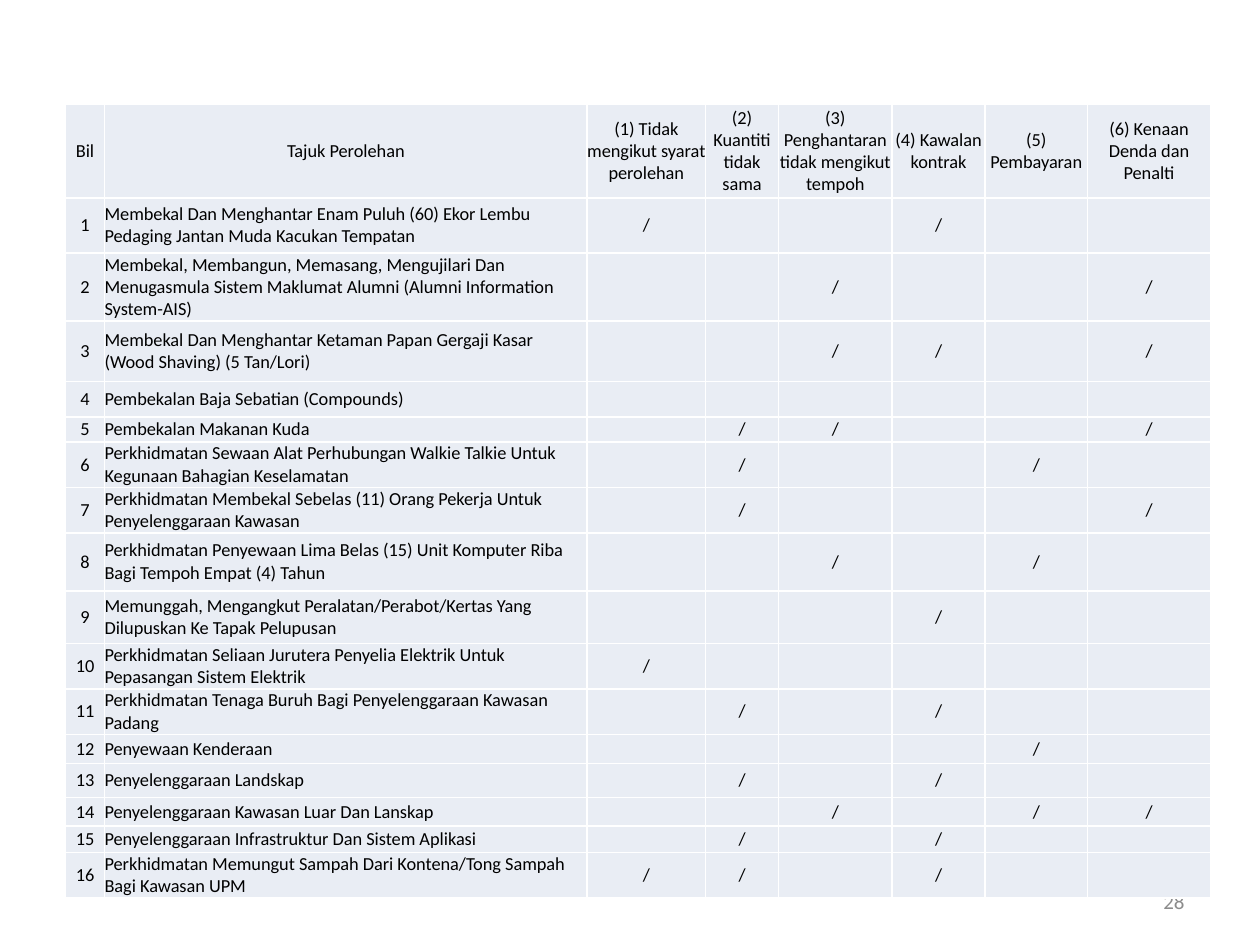
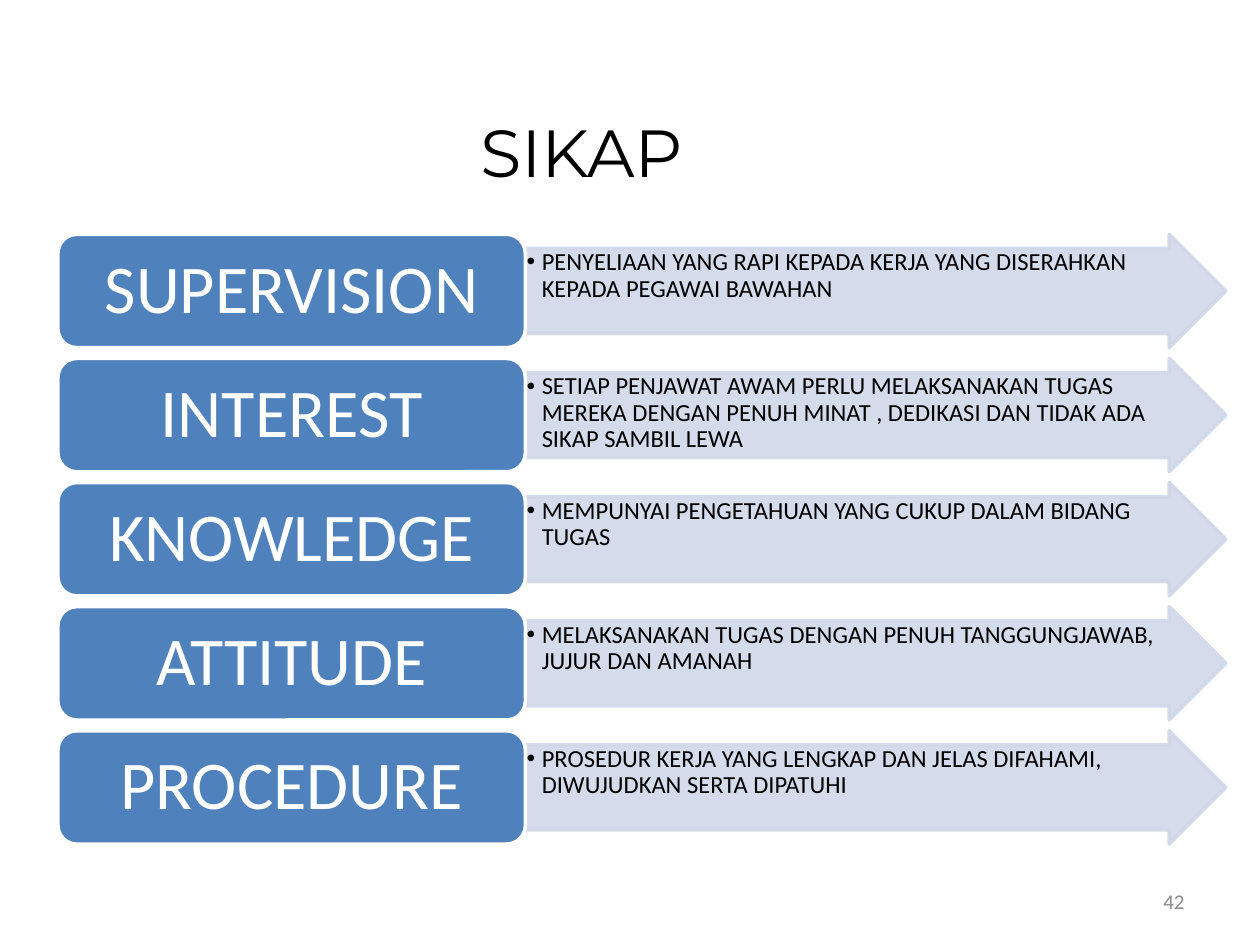
from lxml.etree import SubElement
from pptx import Presentation
from pptx.dml.color import RGBColor
from pptx.enum.shapes import MSO_SHAPE as Shape
from pptx.enum.text import MSO_ANCHOR as Anchor, MSO_AUTO_SIZE as AutoSize, PP_ALIGN as Align
from pptx.oxml.ns import qn
from pptx.util import Inches, Pt

# Shared style: the slide is a grid of 100 columns by 75 rows
WIDTH, HEIGHT = Inches(10), Inches(7.5)
COL, ROW = WIDTH / 100, HEIGHT / 75
BLACK, WHITE, GREY = "000000", "FFFFFF", "8C8C8C"
BLUE, PALE_BLUE, CELL_BLUE = "4F81BD", "D0D8E8", "E9EDF4"
TITLE = dict(name="Montserrat", size=38, color=BLACK)
NUMBER = dict(name="Calibri", size=12, color=GREY)
CELL = dict(name="Calibri", size=10.5, color=BLACK)
LABEL = dict(name="Calibri", size=39, color=WHITE)
DETAIL = dict(name="Calibri", size=14, color=BLACK)


def rgb(value):
    return RGBColor.from_string(value)


def set_format(font, style):
    for key, value in style.items():
        if key == "color":
            font.color.rgb = rgb(value)
        else:
            setattr(font, key, Pt(value) if key == "size" else value)


def set_margins(target, left, top, right, bottom):
    for side, value in dict(left=left, top=top, right=right, bottom=bottom).items():
        setattr(target, f"margin_{side}", Inches(value))


def set_alpha(parent, percent):
    for color in parent.iter(qn("a:srgbClr")):
        SubElement(color, qn("a:alpha"), val=str(percent * 1000))


def add_bullet(p, indent):
    pPr = p._p.get_or_add_pPr()
    pPr.set("marL", str(Inches(indent)))
    pPr.set("indent", str(-Inches(indent)))
    SubElement(pPr, qn("a:buFont"), typeface="Arial")
    SubElement(pPr, qn("a:buChar"), char="•")


class Deck:
    """Holds the presentation and the slide being built."""

    def __init__(self):
        self.prs = Presentation()
        self.prs.slide_width, self.prs.slide_height = WIDTH, HEIGHT
        self.s = None

    def box(self, col, row, cols, rows):
        return [round(v) for v in (col * COL, row * ROW, cols * COL, rows * ROW)]

    def text(self, tf, text, style, align, anchor=Anchor.MIDDLE):
        tf.word_wrap = True
        tf.auto_size = AutoSize.NONE
        tf.vertical_anchor = anchor
        p = tf.paragraphs[0]
        p.text, p.alignment = text, align
        for r in p.runs:
            set_format(r.font, style)
        return p

    def new_slide(self, number, title=None):
        self.s = self.prs.slides.add_slide(self.prs.slide_layouts[5 if title else 6])
        if title:
            sp = self.s.shapes.title
            sp.left, sp.top, sp.width, sp.height = self.box(4.6, 8.3, 83.1, 9.5)
            self.text(sp.text_frame, title, TITLE, Align.CENTER, Anchor.TOP)
        sp = self.s.shapes.add_textbox(*self.box(71.7, 69.5, 23.3, 4))
        self.text(sp.text_frame, number, NUMBER, Align.RIGHT)

    def shape(self, kind, box, fill, line, opacity=None):
        sp = self.s.shapes.add_shape(kind, *self.box(*box))
        sp.shadow.inherit = False
        sp.fill.solid()
        sp.fill.fore_color.rgb = rgb(fill)
        sp.line.color.rgb = rgb(line)
        sp.line.width = Pt(2)
        if opacity:
            set_alpha(sp._element.spPr, opacity)
        return sp

    def arrow(self, box, text):
        sp = self.shape(Shape.RIGHT_ARROW, box, PALE_BLUE, PALE_BLUE, 90)
        sp.adjustments[0], sp.adjustments[1] = 0.75, 0.5
        p = self.text(sp.text_frame, text, DETAIL, Align.LEFT, Anchor.TOP)
        set_margins(sp.text_frame, 0.01, 0.01, 0.23, 0.01)
        add_bullet(p, 0.12)
        p.line_spacing = 0.9

    def label(self, box, text):
        sp = self.shape(Shape.ROUNDED_RECTANGLE, box, BLUE, WHITE)
        p = self.text(sp.text_frame, text, LABEL, Align.CENTER)
        set_margins(sp.text_frame, 0.16, 0.08, 0.16, 0.08)
        p.line_spacing = 0.9

    def cell(self, cell, text, align):
        tcPr = cell._tc.get_or_add_tcPr()
        for side in ("lnL", "lnR", "lnT", "lnB"):
            ln = SubElement(tcPr, qn(f"a:{side}"), w=str(Pt(1)))
            SubElement(SubElement(ln, qn("a:solidFill")), qn("a:srgbClr"), val=WHITE)
        cell.fill.solid()
        cell.fill.fore_color.rgb = rgb(CELL_BLUE)
        cell.vertical_anchor = Anchor.MIDDLE
        set_margins(cell, 0, 0, 0, 0)
        p = cell.text_frame.paragraphs[0]
        p.text, p.alignment = text, align
        for r in p.runs:
            set_format(r.font, CELL)
        if not text:
            SubElement(p._p, qn("a:endParaRPr"), sz=str(int(CELL["size"] * 100)))

    def table(self, col, row, widths, heights, records, left_column):
        box = self.box(col, row, sum(widths), sum(heights))
        table = self.s.shapes.add_table(len(heights), len(widths), *box).table
        table.first_row = table.horz_banding = False
        for column, width in zip(table.columns, widths):
            column.width = round(width * COL)
        for line, height in zip(table.rows, heights):
            line.height = round(height * ROW)
        for i, record in enumerate(records):
            for j, text in enumerate(record):
                left = i > 0 and j == left_column
                self.cell(table.cell(i, j), text, Align.LEFT if left else Align.CENTER)


# Findings: each procurement title with the numbers of its issues
HEADINGS = ["Bil", "Tajuk Perolehan", "(1) Tidak mengikut syarat perolehan",
            "(2)\vKuantiti tidak sama", "(3)\vPenghantaran tidak mengikut tempoh",
            "(4) Kawalan kontrak", "(5) Pembayaran", "(6) Kenaan Denda dan Penalti"]
PROCUREMENTS = [
    ("Membekal Dan Menghantar Enam Puluh (60) Ekor Lembu Pedaging Jantan Muda Kacukan Tempatan", (1, 4)),
    ("Membekal, Membangun, Memasang, Mengujilari Dan Menugasmula Sistem Maklumat Alumni "
     "(Alumni Information System-AIS)", (3, 6)),
    ("Membekal Dan Menghantar Ketaman Papan Gergaji Kasar (Wood Shaving) (5 Tan/Lori)", (3, 4, 6)),
    ("Pembekalan Baja Sebatian (Compounds)", ()),
    ("Pembekalan Makanan Kuda", (2, 3, 6)),
    ("Perkhidmatan Sewaan Alat Perhubungan Walkie Talkie Untuk Kegunaan Bahagian Keselamatan", (2, 5)),
    ("Perkhidmatan Membekal Sebelas (11) Orang Pekerja Untuk Penyelenggaraan Kawasan", (2, 6)),
    ("Perkhidmatan Penyewaan Lima Belas (15) Unit Komputer Riba Bagi Tempoh Empat (4) Tahun", (3, 5)),
    ("Memunggah, Mengangkut Peralatan/Perabot/Kertas Yang Dilupuskan Ke Tapak Pelupusan", (4,)),
    ("Perkhidmatan Seliaan Jurutera Penyelia Elektrik Untuk Pepasangan Sistem Elektrik", (1,)),
    ("Perkhidmatan Tenaga Buruh Bagi Penyelenggaraan Kawasan Padang", (2, 4)),
    ("Penyewaan Kenderaan", (5,)),
    ("Penyelenggaraan Landskap", (2, 4)),
    ("Penyelenggaraan Kawasan Luar Dan Lanskap", (3, 5, 6)),
    ("Penyelenggaraan Infrastruktur Dan Sistem Aplikasi", (2, 4)),
    ("Perkhidmatan Memungut Sampah Dari Kontena/Tong Sampah Bagi Kawasan UPM", (1, 2, 4)),
]
COLUMN_WIDTHS = [3.1, 38.3, 9.4, 5.8, 9, 7.4, 8.1, 9.8]
ROW_HEIGHTS = [7.4, 4.4, 5.4, 4.8, 2.8, 2, 3.6, 3.6, 4.6, 4.2, 3.6, 3.6, 2.3, 2.7, 2.3, 2.1, 3.6]

# Attitude: each quality with its meaning
QUALITIES = {
    "SUPERVISION": "PENYELIAAN YANG RAPI KEPADA KERJA YANG DISERAHKAN KEPADA PEGAWAI BAWAHAN",
    "INTEREST": "SETIAP PENJAWAT AWAM PERLU MELAKSANAKAN TUGAS MEREKA DENGAN PENUH MINAT , "
                "DEDIKASI DAN TIDAK ADA SIKAP SAMBIL LEWA",
    "KNOWLEDGE": "MEMPUNYAI PENGETAHUAN YANG CUKUP DALAM BIDANG TUGAS",
    "ATTITUDE": "MELAKSANAKAN TUGAS DENGAN PENUH TANGGUNGJAWAB, JUJUR DAN AMANAH",
    "PROCEDURE": "PROSEDUR KERJA YANG LENGKAP DAN JELAS DIFAHAMI, DIWUJUDKAN SERTA DIPATUHI",
}


def build_findings(deck):
    deck.new_slide("28")
    records = [HEADINGS]
    for number, (title, issues) in enumerate(PROCUREMENTS, 1):
        marks = ["/" if issue in issues else "" for issue in range(1, 7)]
        records.append([str(number), title, *marks])
    deck.table(5.2, 8.3, COLUMN_WIDTHS, ROW_HEIGHTS, records, left_column=1)


def build_attitude(deck):
    deck.new_slide("42", "SIKAP")
    top, pitch, height = 18.6, 9.85, 9
    for i, (quality, meaning) in enumerate(QUALITIES.items()):
        row = top + i * pitch
        deck.arrow((41.7, row, 55.6, height), meaning)
        deck.label((4.6, row, 37.1, height), quality)


def main():
    deck = Deck()
    build_findings(deck)
    build_attitude(deck)
    deck.prs.save("out.pptx")


if __name__ == "__main__":
    main()
